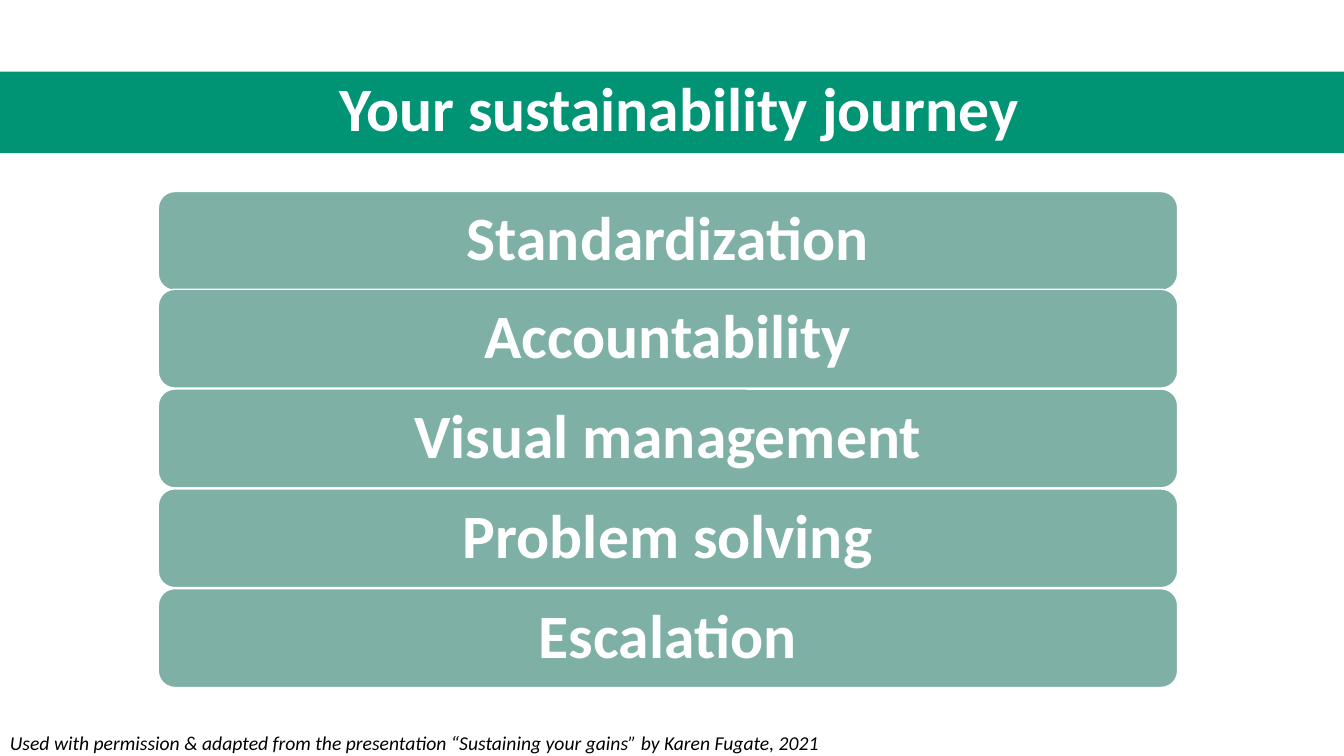
from pptx import Presentation
from pptx.dml.color import RGBColor
from pptx.enum.shapes import MSO_SHAPE
from pptx.enum.text import MSO_ANCHOR, PP_ALIGN
from pptx.util import Inches, Pt

GREEN = RGBColor(0x00, 0x93, 0x74)
SAGE = RGBColor(0x7E, 0xB0, 0xA6)
WHITE = RGBColor(0xFF, 0xFF, 0xFF)
BLACK = RGBColor(0x00, 0x00, 0x00)

STEPS = [
    ("Standardization", 1.9),
    ("Accountability", 2.87),
    ("Visual management", 3.86),
    ("Problem solving", 4.85),
    ("Escalation", 5.84),
]


def write_head(shape, text):
    frame = shape.text_frame
    frame.word_wrap = True
    frame.vertical_anchor = MSO_ANCHOR.MIDDLE
    para = frame.paragraphs[0]
    para.text = text
    para.alignment = PP_ALIGN.CENTER
    para.line_spacing = 0.9
    para.font.name = "Calibri"
    para.font.size = Pt(44)
    para.font.bold = True
    para.font.color.rgb = WHITE


deck = Presentation()
deck.slide_width = Inches(13.33)
deck.slide_height = Inches(7.5)
slide = deck.slides.add_slide(deck.slide_layouts[6])
shapes = slide.shapes

band = shapes.add_shape(MSO_SHAPE.RECTANGLE, 0, Inches(0.71), Inches(13.33), Inches(0.81))
band.shadow.inherit = False
band.fill.solid()
band.fill.fore_color.rgb = GREEN
band.line.fill.background()

title = shapes.add_textbox(Inches(0.61), Inches(0.7), Inches(12.26), Inches(0.81))
write_head(title, "Your sustainability journey")

for label, top in STEPS:
    bar = shapes.add_shape(MSO_SHAPE.ROUNDED_RECTANGLE, Inches(1.57), Inches(top), Inches(10.11), Inches(0.98))
    bar.shadow.inherit = False
    bar.fill.solid()
    bar.fill.fore_color.rgb = SAGE
    bar.line.color.rgb = WHITE
    bar.line.width = Pt(1)
    write_head(bar, label)

credit = shapes.add_textbox(0, Inches(7.2), Inches(10.4), Inches(0.34))
credit.text_frame.word_wrap = True
para = credit.text_frame.paragraphs[0]
para.text = "Used with permission & adapted from the presentation “Sustaining your gains” by Karen Fugate, 2021"
para.font.name = "Calibri"
para.font.size = Pt(14)
para.font.italic = True
para.font.color.rgb = BLACK

deck.save("out.pptx")
